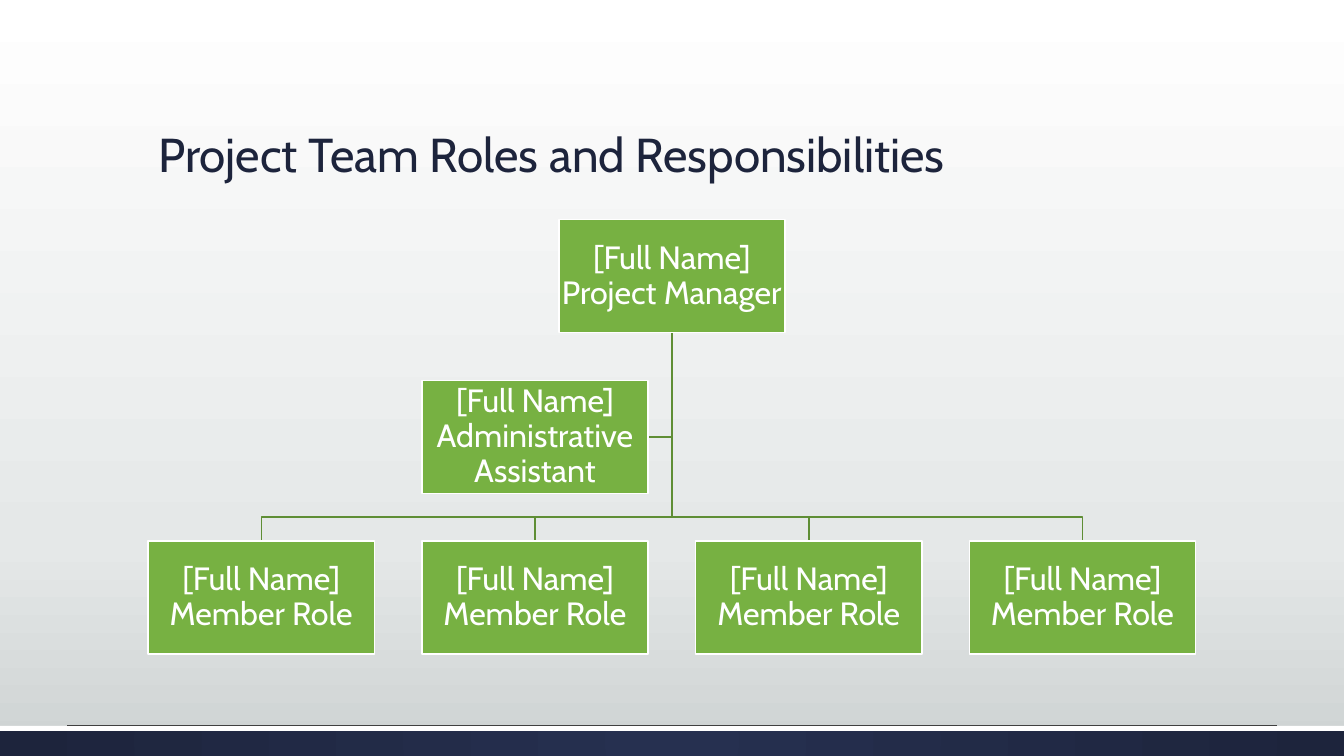
from lxml.etree import SubElement
from pptx import Presentation
from pptx.dml.color import RGBColor
from pptx.enum.shapes import MSO_CONNECTOR, MSO_SHAPE
from pptx.enum.text import MSO_ANCHOR, MSO_AUTO_SIZE, PP_ALIGN
from pptx.oxml.ns import qn
from pptx.util import Inches, Pt

WIDE, HIGH = 13.33, 7.5
NAVY, GREEN, LEAF, WHITE = "1D243C", "77B142", "5F8E35", "FFFFFF"
FONT = "Cabin"
COLS = 4
GAP = 0.21  # gap between boxes, as a share of box width


def color(code):
    return RGBColor.from_string(code)


def blend(fill, root, stops, round=False):
    """Fill with a gradient of (percent, hex) stops, top-down or circular."""
    fill.gradient()
    grad = root.find(".//" + qn("a:gradFill"))
    grad.clear()
    items = SubElement(grad, qn("a:gsLst"))
    for pos, code in stops:
        stop = SubElement(items, qn("a:gs"), pos=str(pos * 1000))
        SubElement(stop, qn("a:srgbClr"), val=code)
    if round:
        way = SubElement(grad, qn("a:path"), {"path": "circle"})
        SubElement(way, qn("a:fillToRect"), {side: "50000" for side in "ltrb"})
    else:
        SubElement(grad, qn("a:lin"), ang="5400000", scaled="0")


def block(slide, left, top, wide, high, fill):
    shape = slide.shapes.add_shape(
        MSO_SHAPE.RECTANGLE, Inches(left), Inches(top), Inches(wide), Inches(high))
    shape.shadow.inherit = False
    shape.fill.solid()
    shape.fill.fore_color.rgb = color(fill)
    shape.line.fill.background()
    return shape


def rule(slide, left, right, y):
    link = slide.shapes.add_connector(
        MSO_CONNECTOR.STRAIGHT, Inches(left), Inches(y), Inches(right), Inches(y))
    link.line.color.rgb = color("404040")
    link.line.width = Pt(0.5)
    SubElement(link.element.spPr, qn("a:effectLst"))


def branch(slide, *points):
    """Draw an open bent line through the points."""
    start, *rest = [(Inches(x), Inches(y)) for x, y in points]
    pen = slide.shapes.build_freeform(*start)
    pen.add_line_segments(rest, close=False)
    shape = pen.convert_to_shape()
    shape.shadow.inherit = False
    shape.fill.background()
    shape.line.color.rgb = color(LEAF)
    shape.line.width = Pt(1)


def write(frame, text, size, code, align, anchor):
    frame.text = text
    frame.word_wrap = True
    frame.auto_size = MSO_AUTO_SIZE.NONE
    frame.vertical_anchor = anchor
    para = frame.paragraphs[0]
    para.alignment = align
    para.line_spacing = 0.9
    font = para.runs[0].font
    font.name, font.size = FONT, Pt(size)
    font.color.rgb = color(code)


def backdrop(slide):
    blend(slide.background.fill, slide.element,
          [(0, WHITE), (72, "E5E8E8"), (100, "CDD2D2")])
    edge = 0.96 * HIGH
    band = block(slide, 0, edge, WIDE, HIGH - edge, NAVY)
    blend(band.fill, band.element, [(0, "263050"), (100, NAVY)], round=True)
    block(slide, 0, edge, WIDE, 0.05, WHITE)
    rule(slide, 0.05 * WIDE, 0.95 * WIDE, edge)


def heading(slide, left, top, wide, high):
    title = slide.shapes.title
    title.left, title.top = Inches(left), Inches(top)
    title.width, title.height = Inches(wide), Inches(high)
    write(title.text_frame, "Project Team Roles and Responsibilities", 34, NAVY,
          PP_ALIGN.LEFT, MSO_ANCHOR.BOTTOM)


def chart(slide, left, top, wide):
    """Team chart on a grid of four columns and three rows."""
    side = wide / (COLS + (COLS - 1) * GAP)
    high, gap = side / 2, side * GAP
    mid = left + wide / 2

    def spot(col, row):
        return left + col * (side + gap), top + row * (high + gap)

    def person(col, row, role):
        box = block(slide, *spot(col, row), side, high, GREEN)
        box.line.color.rgb = color(WHITE)
        box.line.width = Pt(1)
        frame = box.text_frame
        frame.margin_left = frame.margin_right = Inches(0.02)
        frame.margin_top = frame.margin_bottom = Inches(0.02)
        write(frame, f"[Full Name] {role}", 23, WHITE,
              PP_ALIGN.CENTER, MSO_ANCHOR.MIDDLE)

    root = (mid, top + high)
    x, y = spot(1, 1)
    branch(slide, root, (mid, y + high / 2), (x + side, y + high / 2))
    for col in reversed(range(COLS)):
        x, y = spot(col, 2)
        x, bus = x + side / 2, y - gap / 2
        branch(slide, root, (mid, bus), (x, bus), (x, y))

    person((COLS - 1) / 2, 0, "Project Manager")
    for col in range(COLS):
        person(col, 2, "Member Role")
    person(1, 1, "Administrative Assistant")


def main():
    deck = Presentation()
    deck.slide_width, deck.slide_height = Inches(WIDE), Inches(HIGH)
    slide = deck.slides.add_slide(deck.slide_layouts[5])
    wide = 10.39
    left = (WIDE - wide) / 2
    backdrop(slide)
    heading(slide, left, 0.51, wide, 1.35)
    chart(slide, left, 2.18, wide)
    deck.save("out.pptx")


if __name__ == "__main__":
    main()
